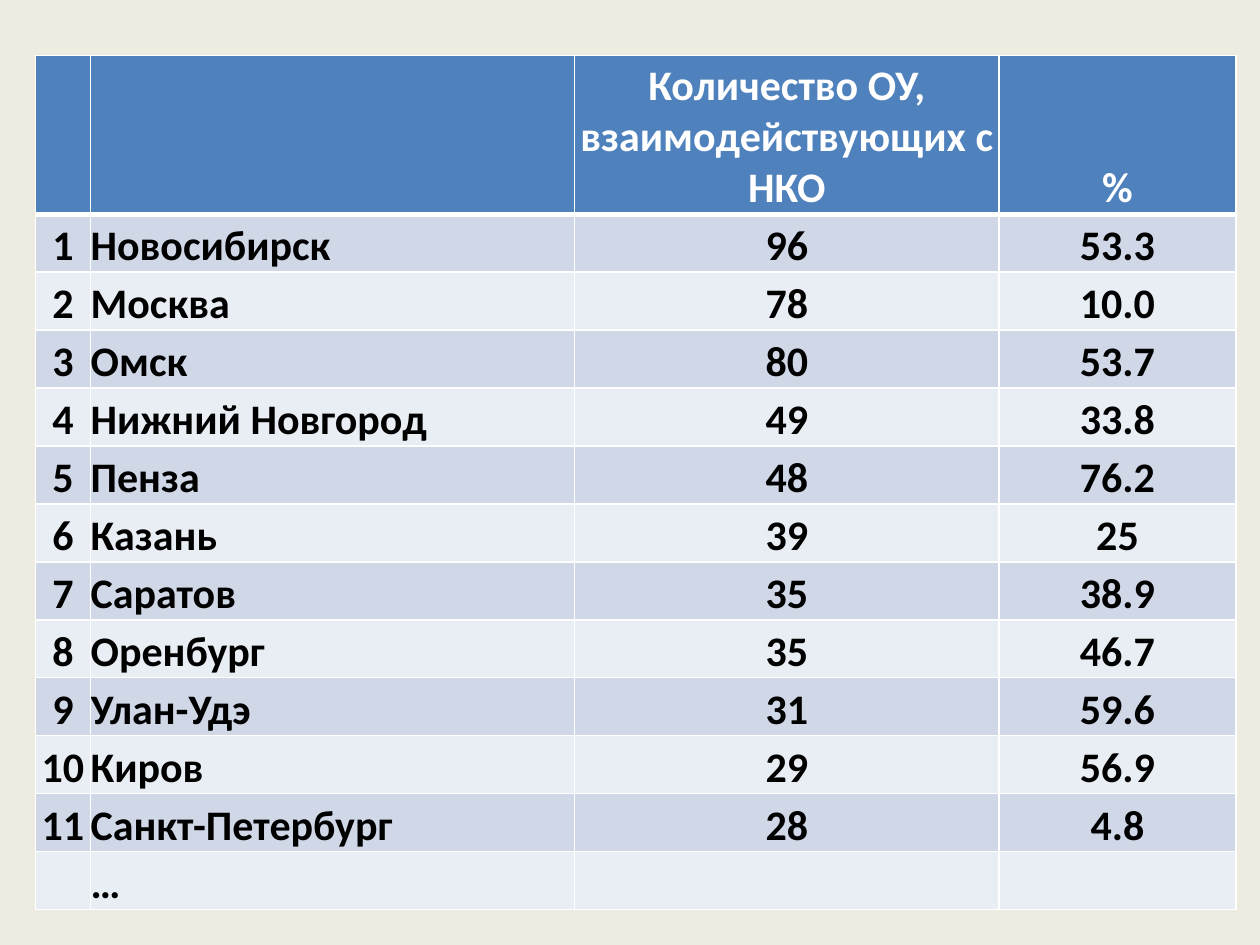
from dataclasses import dataclass

from lxml import etree
from pptx import Presentation
from pptx.dml.color import RGBColor
from pptx.enum.text import MSO_ANCHOR, PP_ALIGN
from pptx.oxml.ns import qn
from pptx.util import Inches, Pt

BOTTOM = MSO_ANCHOR.BOTTOM
LEFT, CENTER = PP_ALIGN.LEFT, PP_ALIGN.CENTER
BLANK_LAYOUT = 6


@dataclass(frozen=True)
class Theme:
    background: str = "EEECE1"
    header: str = "4F81BD"
    bands: tuple = ("D0D8E8", "E9EDF4")
    border: str = "FFFFFF"
    header_text: str = "FFFFFF"
    body_text: str = "000000"
    font: str = "Calibri"
    size: int = 24
    thin: int = 1
    thick: int = 3


THEME = Theme()
HEADER = ("", "", "Количество ОУ, взаимодействующих с НКО", "%")
CITIES = [
    ("1", "Новосибирск", "96", "53.3"),
    ("2", "Москва", "78", "10.0"),
    ("3", "Омск", "80", "53.7"),
    ("4", "Нижний Новгород", "49", "33.8"),
    ("5", "Пенза", "48", "76.2"),
    ("6", "Казань", "39", "25"),
    ("7", "Саратов", "35", "38.9"),
    ("8", "Оренбург", "35", "46.7"),
    ("9", "Улан-Удэ", "31", "59.6"),
    ("10", "Киров", "29", "56.9"),
    ("11", "Санкт-Петербург", "28", "4.8"),
    ("", "…", "", ""),
]
SLIDE_WIDTH, SLIDE_HEIGHT = 10, 7.5
TABLE_LEFT, TABLE_TOP = 0.28, 0.44
COLUMN_WIDTHS = (0.44, 3.84, 3.37, 1.88)
COLUMN_ALIGNMENTS = (CENTER, LEFT, CENTER, CENTER)
HEADER_HEIGHT, CITY_HEIGHT = 1.26, 0.46


def write_text(cell, text, color, alignment):
    para = cell.text_frame.paragraphs[0]
    para.alignment = alignment
    span = para.add_run()
    span.text = text
    span.font.name = THEME.font
    span.font.size = Pt(THEME.size)
    span.font.bold = True
    span.font.color.rgb = RGBColor.from_string(color)


def draw_borders(cell, top, bottom):
    properties = cell._tc.get_or_add_tcPr()
    widths = {"L": THEME.thin, "R": THEME.thin, "T": top, "B": bottom}
    for side, width in widths.items():
        line = etree.SubElement(properties, qn(f"a:ln{side}"), w=str(Pt(width)))
        fill = etree.SubElement(line, qn("a:solidFill"))
        etree.SubElement(fill, qn("a:srgbClr"), val=THEME.border)


def format_cell(cell, fill):
    cell.margin_left = cell.margin_right = 0
    cell.margin_top = cell.margin_bottom = 0
    cell.vertical_anchor = BOTTOM
    cell.fill.solid()
    cell.fill.fore_color.rgb = RGBColor.from_string(fill)


def add_city_table(page):
    rows = [HEADER, *CITIES]
    heights = [HEADER_HEIGHT] + [CITY_HEIGHT] * len(CITIES)
    frame = page.shapes.add_table(
        len(rows), len(COLUMN_WIDTHS), Inches(TABLE_LEFT), Inches(TABLE_TOP),
        Inches(sum(COLUMN_WIDTHS)), Inches(sum(heights)))
    table = frame.table
    for column, width in zip(table.columns, COLUMN_WIDTHS):
        column.width = Inches(width)
    for index, (values, height) in enumerate(zip(rows, heights)):
        table.rows[index].height = Inches(height)
        is_header = index == 0
        fill = THEME.header if is_header else THEME.bands[(index - 1) % 2]
        color = THEME.header_text if is_header else THEME.body_text
        top = THEME.thick if index == 1 else THEME.thin
        bottom = THEME.thick if is_header else THEME.thin
        for cell, text, alignment in zip(table.rows[index].cells, values, COLUMN_ALIGNMENTS):
            draw_borders(cell, top, bottom)
            format_cell(cell, fill)
            if text:
                write_text(cell, text, color=color, alignment=alignment)


def main():
    deck = Presentation()
    deck.slide_width, deck.slide_height = Inches(SLIDE_WIDTH), Inches(SLIDE_HEIGHT)
    page = deck.slides.add_slide(deck.slide_layouts[BLANK_LAYOUT])
    page.background.fill.solid()
    page.background.fill.fore_color.rgb = RGBColor.from_string(THEME.background)
    add_city_table(page)
    deck.save("out.pptx")


if __name__ == "__main__":
    main()
